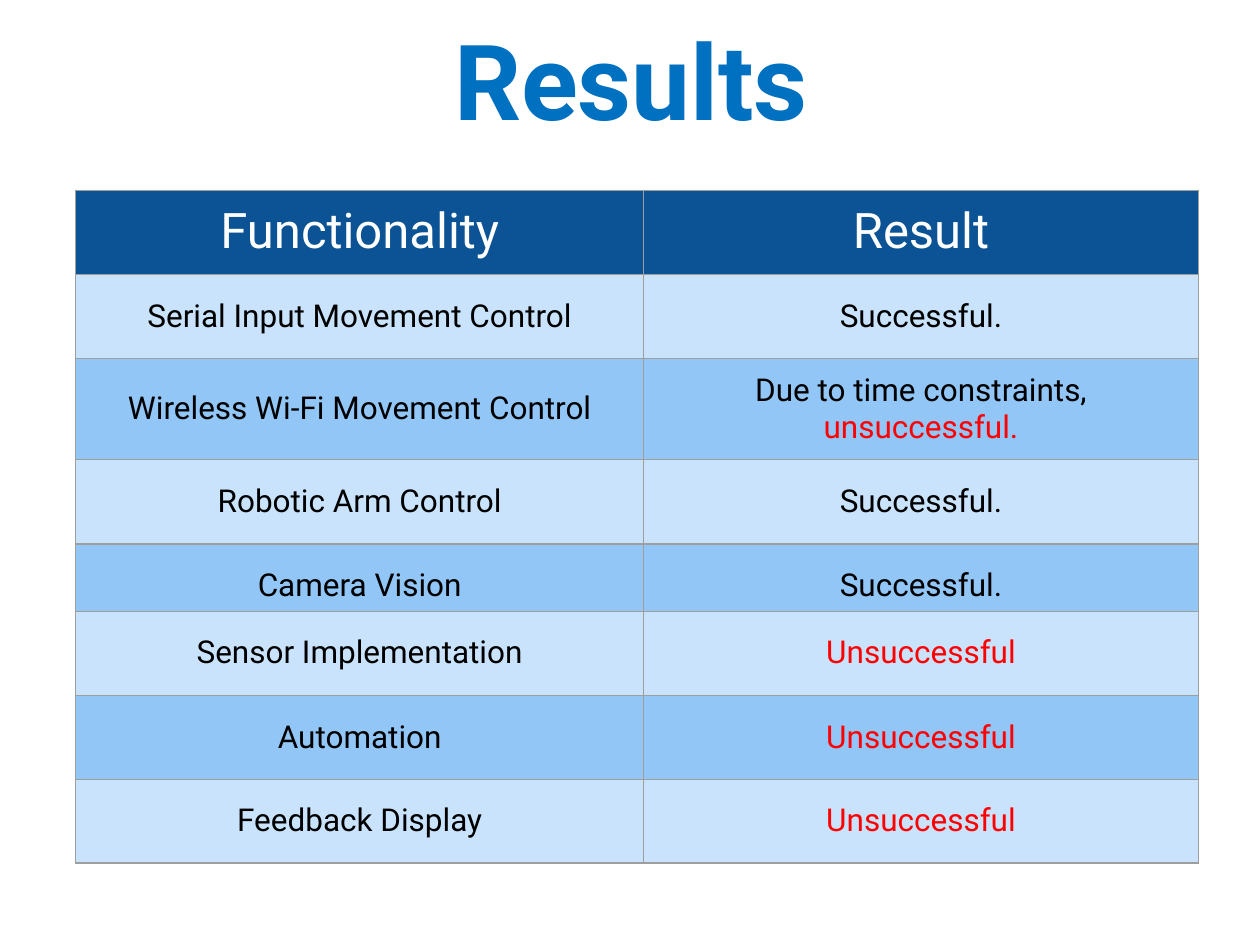
"""Build the Results slide: functionality outcomes in stacked tables."""
from lxml.etree import SubElement
from pptx import Presentation
from pptx.dml.color import RGBColor
from pptx.enum.text import MSO_ANCHOR, PP_ALIGN
from pptx.oxml.ns import qn
from pptx.util import Inches, Pt

TITLE_BLUE = RGBColor(0x00, 0x70, 0xC0)
HEADER_BLUE = RGBColor(0x0B, 0x53, 0x94)
LIGHT_BLUE = RGBColor(0xC8, 0xE3, 0xFB)
MID_BLUE = RGBColor(0x91, 0xC6, 0xF7)
BORDER_GREY = RGBColor(0x9E, 0x9E, 0x9E)
WHITE = RGBColor(0xFF, 0xFF, 0xFF)
BLACK = RGBColor(0x00, 0x00, 0x00)
RED = RGBColor(0xFF, 0x00, 0x00)

COLUMN_WIDTHS = (4.51, 4.4)
ROW_HEIGHT = 0.67
SUCCESS = [("Successful.", BLACK)]
FAILURE = [("Unsuccessful", RED)]
DELAYED = [("Due to time constraints, ", BLACK), ("unsuccessful.", RED)]

SECTIONS = [
    (1.51, [
        ("Functionality", [("Result", WHITE)], HEADER_BLUE, 0.65),
        ("Serial Input Movement Control", SUCCESS, LIGHT_BLUE, ROW_HEIGHT),
        ("Wireless Wi-Fi Movement Control", DELAYED, MID_BLUE, 0.78),
        ("Robotic Arm Control", SUCCESS, LIGHT_BLUE, ROW_HEIGHT),
        ("Camera Vision", SUCCESS, MID_BLUE, ROW_HEIGHT),
    ]),
    (4.85, [
        ("Sensor Implementation", FAILURE, LIGHT_BLUE, ROW_HEIGHT),
        ("", [], LIGHT_BLUE, ROW_HEIGHT),
    ]),
    (6.18, [("Feedback Display", FAILURE, LIGHT_BLUE, ROW_HEIGHT)]),
    (5.52, [("Automation", FAILURE, MID_BLUE, ROW_HEIGHT)]),
]


def add_runs(paragraph, runs, size, bold=False):
    paragraph.alignment = PP_ALIGN.CENTER
    for text, color in runs:
        run = paragraph.add_run()
        run.text = text
        run.font.name = "Roboto"
        run.font.size = Pt(size)
        run.font.bold = bold
        run.font.color.rgb = color


def style_cell(cell, fill):
    cell.vertical_anchor = MSO_ANCHOR.MIDDLE
    cell.margin_left = cell.margin_right = Inches(0.1)
    cell.margin_top = cell.margin_bottom = Inches(0.1)
    properties = cell._tc.get_or_add_tcPr()
    for side in ("a:lnL", "a:lnR", "a:lnT", "a:lnB"):
        border = SubElement(properties, qn(side), w=str(Pt(0.75)))
        solid = SubElement(border, qn("a:solidFill"))
        SubElement(solid, qn("a:srgbClr"), val=str(BORDER_GREY))
    cell.fill.solid()
    cell.fill.fore_color.rgb = fill


presentation = Presentation()
presentation.slide_width = Inches(10)
presentation.slide_height = Inches(7.5)
slide = presentation.slides.add_slide(presentation.slide_layouts[6])

title = slide.shapes.add_textbox(Inches(0.51), Inches(0.21), Inches(9), Inches(0.77)).text_frame
title.word_wrap = True
title.vertical_anchor = MSO_ANCHOR.MIDDLE
title.margin_left = title.margin_right = title.margin_bottom = 0
title.margin_top = Inches(0.05)
add_runs(title.paragraphs[0], [("Results", TITLE_BLUE)], 60, bold=True)

for top, rows in SECTIONS:
    section = slide.shapes.add_table(
        len(rows), 2, Inches(0.6), Inches(top),
        Inches(sum(COLUMN_WIDTHS)), Inches(sum(row[3] for row in rows)),
    ).table
    section.first_row = False
    section.horz_banding = False
    for column, width in zip(section.columns, COLUMN_WIDTHS):
        column.width = Inches(width)
    for row, (functionality, result, fill, height) in zip(section.rows, rows):
        row.height = Inches(height)
        is_header = fill == HEADER_BLUE
        label = [(functionality, WHITE if is_header else BLACK)] if functionality else []
        for cell, runs in zip(row.cells, (label, result)):
            style_cell(cell, fill)
            add_runs(cell.text_frame.paragraphs[0], runs, 28 if is_header else 18)

presentation.save("out.pptx")
